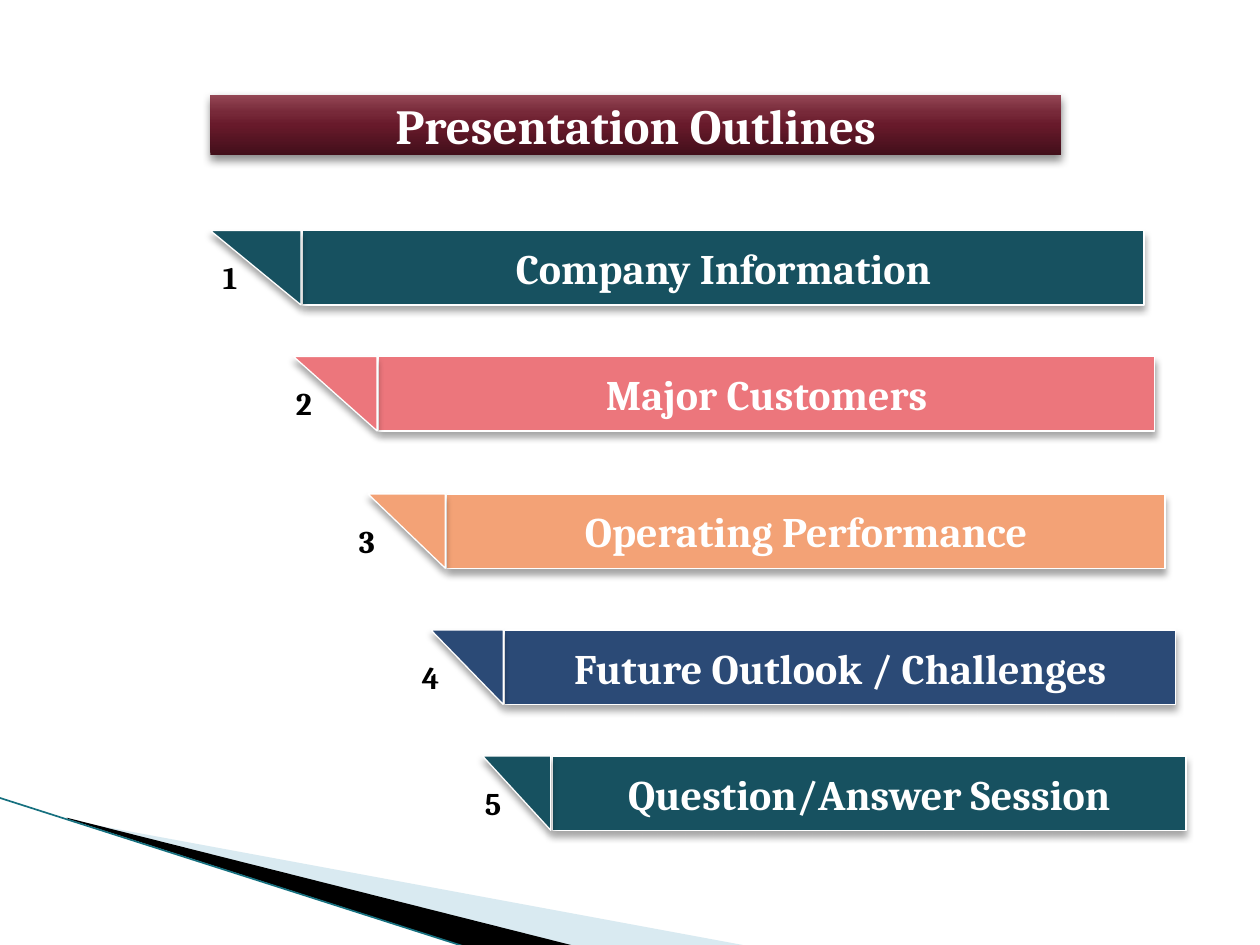
from lxml import etree
from pptx import Presentation
from pptx import util as u
from pptx.dml.color import RGBColor
from pptx.enum import shapes, text
from pptx.oxml.ns import qn

FONT = "Cambria"
WHITE, BLACK = "FFFFFF", "000000"
TITLE = "Presentation Outlines"
TITLE_STOPS = [(0, "420F1A"), (50, "681A2B"), (70, "772939"), (100, "944755")]
# wording, colour, left of the banner, top of the banner, left of the number
TOPICS = [
    ("Company Information", "175160", 1.67, 1.83, 1.67),
    ("Major Customers", "EC767C", 2.33, 2.83, 2.25),
    ("Operating Performance", "F3A276", 2.92, 3.92, 2.75),
    ("Future Outlook / Challenges", "2B4A76", 3.42, 5, 3.25),
    ("Question/Answer Session", "175160", 3.83, 6, 3.75),
]
FIRST_RIGHT, RIGHT_STEP, BANNER_HEIGHT = 9.08, 1 / 12, 0.59
FOLD_SHARE, BAR_SHARE = 0.097, 0.099
# outline, colour, opacity in percent
WEDGES = [
    ([(0.55, 6.51), (5.95, 7.51), (4.56, 7.51), (0.55, 6.5)], "A0CBDC", 40),
    ([(0.53, 6.49), (4.57, 7.51), (3.72, 7.52), (0.54, 6.5)], BLACK, 100),
]
EDGE, EDGE_COLOUR = [(-0.01, 6.33), (3.71, 7.52)], "16707F"


def inches(*values):
    return [u.Inches(value) for value in values]


def rgb(code):
    return RGBColor.from_string(code)


def add_colour(parent, code, opacity=100):
    colour = etree.SubElement(parent, qn("a:srgbClr"), val=code)
    if opacity < 100:
        etree.SubElement(colour, qn("a:alpha"), val=str(opacity * 1000))


def cast_shadow(shape, opacity, blur, distance):
    shape.shadow.inherit = False
    effects = shape._element.spPr.find(qn("a:effectLst"))
    shadow = etree.SubElement(
        effects, qn("a:outerShdw"), blurRad=str(u.Pt(blur)), dist=str(u.Pt(distance)),
        dir="5400000", algn="ctr", rotWithShape="0")
    add_colour(shadow, BLACK, opacity)


def paint(shape, fill, opacity=100, line=None):
    shape.fill.solid()
    shape.fill.fore_color.rgb = rgb(fill)
    if opacity < 100:
        solid = shape._element.spPr.find(qn("a:solidFill"))
        solid.clear()
        add_colour(solid, fill, opacity)
    if line:
        shape.line.color.rgb = rgb(line)
        shape.line.width = u.Pt(0.75)
    else:
        shape.line.fill.background()


def paint_gradient(shape, stops):
    """Fill from bottom to top with the given stops."""
    shape.fill.gradient()
    gradient = shape._element.spPr.find(qn("a:gradFill"))
    stop_list = gradient.find(qn("a:gsLst"))
    stop_list.clear()
    for position, code in stops:
        add_colour(etree.SubElement(stop_list, qn("a:gs"), pos=str(position * 1000)), code)
    gradient.find(qn("a:lin")).set("ang", "16200000")
    shape.line.fill.background()


def write(shape, words, size, colour, align, anchor):
    frame = shape.text_frame
    frame.word_wrap = True
    frame.vertical_anchor = anchor
    para = frame.paragraphs[0]
    para.alignment = align
    span = para.add_run()
    span.text = words
    for name, value in dict(name=FONT, size=u.Pt(size), bold=True).items():
        setattr(span.font, name, value)
    span.font.color.rgb = rgb(colour)


def add_banner(page, words, colour, left, top, right):
    """Add a bar with a folded corner at its left."""
    width = right - left
    bar_left = left + BAR_SHARE * width
    group = page.shapes.add_group_shape().shapes
    bar = group.add_shape(shapes.MSO_SHAPE.RECTANGLE,
                          *inches(bar_left, top, right - bar_left, BANNER_HEIGHT))
    fold = group.add_shape(shapes.MSO_SHAPE.RIGHT_TRIANGLE,
                           *inches(left, top, FOLD_SHARE * width, BANNER_HEIGHT))
    fold.rotation = 180
    for part in (bar, fold):
        paint(part, colour, line=WHITE)
        cast_shadow(part, 35, 4, 3)
    write(bar, words, 24, WHITE, text.PP_ALIGN.CENTER, text.MSO_ANCHOR.MIDDLE)


def add_corner(page):
    for points, colour, opacity in WEDGES:
        start, *others = [inches(*point) for point in points]
        builder = page.shapes.build_freeform(*start)
        builder.add_line_segments(others, close=True)
        wedge = builder.convert_to_shape()
        wedge.shadow.inherit = False
        paint(wedge, colour, opacity)
    edge = page.shapes.add_connector(shapes.MSO_CONNECTOR.STRAIGHT,
                                     *inches(*EDGE[0], *EDGE[1]))
    edge.line.color.rgb = rgb(EDGE_COLOUR)
    edge.line.width = u.Pt(0.95)
    etree.SubElement(edge._element.spPr, qn("a:effectLst"))


def main():
    deck = Presentation()
    deck.slide_width, deck.slide_height = inches(10, 7.5)
    page = deck.slides.add_slide(deck.slide_layouts[6])
    add_corner(page)

    title = page.shapes.add_shape(shapes.MSO_SHAPE.RECTANGLE, *inches(1.67, 0.75, 6.75, 0.48))
    paint_gradient(title, TITLE_STOPS)
    cast_shadow(title, 45, 5, 3)
    write(title, TITLE, 28, WHITE, text.PP_ALIGN.CENTER, text.MSO_ANCHOR.MIDDLE)

    for index, (words, colour, left, top, _) in enumerate(TOPICS):
        add_banner(page, words, colour, left, top, FIRST_RIGHT + index * RIGHT_STEP)
    for number, (*_, top, number_left) in enumerate(TOPICS, 1):
        label = page.shapes.add_textbox(*inches(number_left, top + 0.17, 0.33, 0.4))
        write(label, str(number), 18, BLACK, text.PP_ALIGN.LEFT, text.MSO_ANCHOR.TOP)

    deck.save("out.pptx")


if __name__ == "__main__":
    main()
